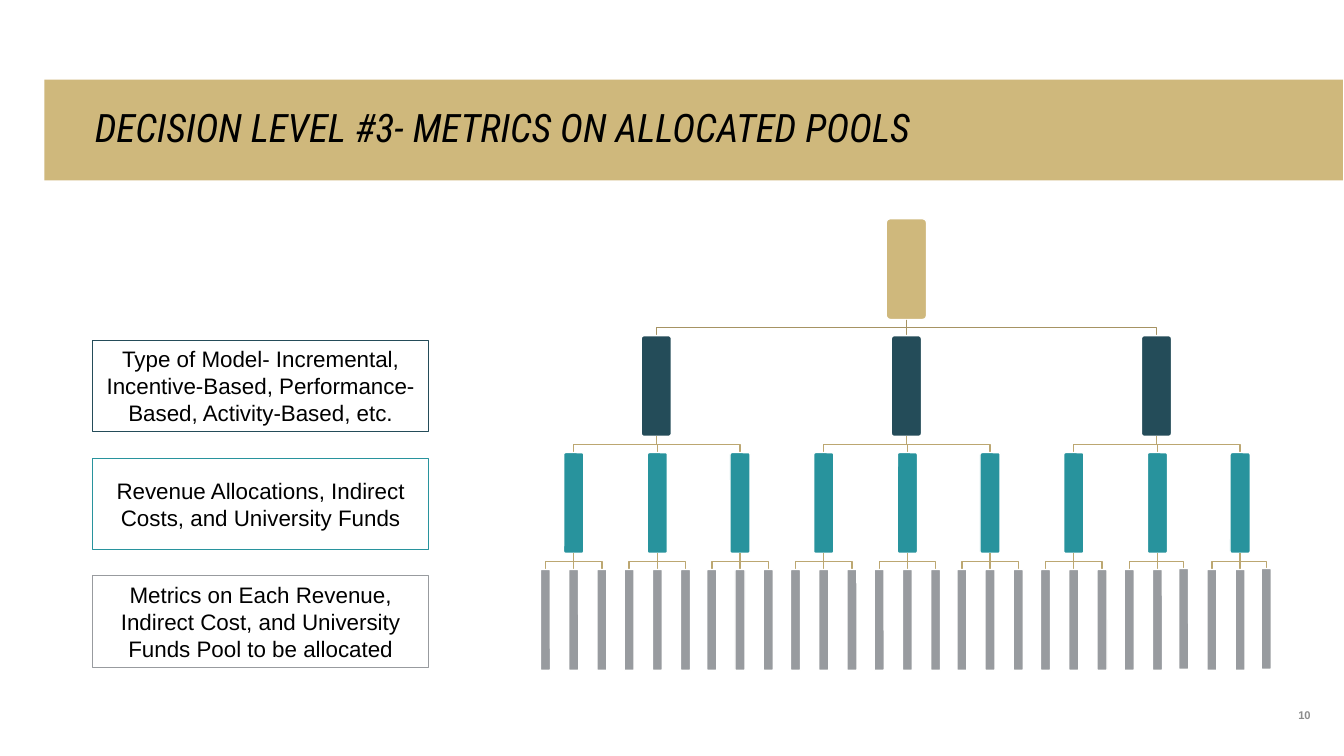
from lxml import etree
from pptx import Presentation
from pptx.dml.color import RGBColor
from pptx.enum.shapes import MSO_CONNECTOR as CONNECTOR, MSO_SHAPE as SHAPE
from pptx.enum.text import MSO_ANCHOR as ANCHOR, PP_ALIGN as ALIGN
from pptx.oxml.ns import qn
from pptx.util import Emu, Pt

PX = 9144  # EMU per px, 100 px to the inch
GOLD, NAVY, TEAL, GRAY = "CFB87C", "244C59", "28939D", "989B9F"
WHITE, BLACK, PAGE_GRAY = "FFFFFF", "000000", "8C8C8C"
TRUNK, BRANCH = "A69363", "BCA771"


def px(length):
    return Emu(length * PX)


def color(value):
    return RGBColor.from_string(value)


class SlideBuilder:
    """Holds the slide and draws its elements in one style."""

    def __init__(self, slide, font="Arial"):
        self.shapes = slide.shapes
        self.font = font

    def box(self, left, top, width, height, fill=None, line=None, weight=1,
            kind=SHAPE.RECTANGLE):
        box = self.shapes.add_shape(kind, px(left), px(top), px(width), px(height))
        box.shadow.inherit = False
        if fill:
            box.fill.solid()
            box.fill.fore_color.rgb = color(fill)
        else:
            box.fill.background()
        self.stroke(box, line, weight)
        return box

    def stroke(self, shape, line, weight=1):
        if line:
            shape.line.color.rgb = color(line)
            shape.line.width = Pt(weight)
        else:
            shape.line.fill.background()

    def set_text(self, shape, text, size, ink=BLACK, align=ALIGN.LEFT,
                 anchor=ANCHOR.MIDDLE, insets=(10, 5, 10, 5), font=None,
                 bold=False, italic=False, spacing=1.0):
        frame = shape.text_frame
        frame.word_wrap = True
        frame.vertical_anchor = anchor
        (frame.margin_left, frame.margin_top,
         frame.margin_right, frame.margin_bottom) = map(px, insets)
        paragraph = frame.paragraphs[0]
        paragraph.text = text
        paragraph.alignment = align
        paragraph.line_spacing = spacing
        style = paragraph.font
        style.name, style.size = font or self.font, Pt(size)
        style.bold, style.italic = bold, italic
        style.color.rgb = color(ink)

    def label(self, left, top, width, height, text, size, **style):
        label = self.shapes.add_textbox(px(left), px(top), px(width), px(height))
        self.set_text(label, text, size, **style)

    def node(self, center, top, width, height, fill):
        node = self.box(center - width // 2, top, width, height, fill, WHITE,
                        kind=SHAPE.ROUNDED_RECTANGLE)
        node.adjustments[0] = 0.1
        return node

    def drop(self, x, start, end, line):
        drop = self.shapes.add_connector(
            CONNECTOR.STRAIGHT, px(x), px(start), px(x), px(end))
        self.stroke(drop, line)
        etree.SubElement(drop._element.spPr, qn("a:effectLst"))
        return drop

    def elbow(self, x, start, to_x, end, line):
        bend = start + 8
        outline = self.shapes.build_freeform(x, start, scale=PX)
        outline.add_line_segments([(x, bend), (to_x, bend), (to_x, end)], close=False)
        elbow = outline.convert_to_shape()
        elbow.shadow.inherit = False
        elbow.fill.background()
        self.stroke(elbow, line)


# Tree levels: top, width, fill, line from the parent, offsets from the parent
NODE_HEIGHT = 100
LEVELS = [
    (217, 40, GOLD, None, ()),
    (333, 30, NAVY, TRUNK, (-248, 0, 248)),
    (449, 20, TEAL, BRANCH, (-82, 1, 83)),
    (565, 10, GRAY, BRANCH, (-28, 0, 28)),
]
RAISED_METRICS = (1176, 1258)  # two metrics sit slightly up and to the left


def grow_tree(builder, parent, parent_x, depth=1):
    if depth == len(LEVELS):
        return
    start = LEVELS[depth - 1][0] + NODE_HEIGHT
    level_top, width, fill, line, offsets = LEVELS[depth]
    for offset in offsets:
        x, top = parent_x + offset, level_top
        if depth == 3 and x in RAISED_METRICS:
            x, top = x - 2, top - 1
        if offset:
            builder.elbow(parent_x, start, x, top, line)
            child = builder.node(x, top, width, NODE_HEIGHT, fill)
        else:
            drop = builder.drop(x, start, top, line)
            child = builder.node(x, top, width, NODE_HEIGHT, fill)
            drop.begin_connect(parent, 2)
            drop.end_connect(child, 0)
        grow_tree(builder, child, x, depth + 1)


LEGEND = [
    (338, 90, NAVY, ANCHOR.TOP, "Type of Model- Incremental, Incentive-Based, "
     "Performance-Based, Activity-Based, etc."),
    (455, 90, TEAL, ANCHOR.MIDDLE,
     "Revenue Allocations, Indirect Costs, and University Funds"),
    (571, 91, GRAY, ANCHOR.MIDDLE, "Metrics on Each Revenue, Indirect Cost, "
     "and University Funds Pool to be allocated"),
]


def main():
    deck = Presentation()
    deck.slide_width, deck.slide_height = px(1333), px(750)
    builder = SlideBuilder(deck.slides.add_slide(deck.slide_layouts[6]))

    # Decision tree
    root_x = 899
    root_top, root_width, root_fill = LEVELS[0][:3]
    root = builder.node(root_x, root_top, root_width, NODE_HEIGHT, root_fill)
    grow_tree(builder, root, root_x)

    # Title banner
    banner = builder.box(44, 79, 1288, 100, GOLD)
    builder.set_text(banner, "DECISION LEVEL #3- METRICS ON ALLOCATED POOLS", 28,
                     insets=(50, 5, 100, 5), font="Roboto Condensed",
                     italic=True, spacing=0.9)

    # Page number
    builder.label(1215, 666, 85, 50, "10", 8, ink=PAGE_GRAY, align=ALIGN.RIGHT,
                  anchor=ANCHOR.BOTTOM, insets=(0, 0, 0, 0), bold=True)

    # Level descriptions
    for top, height, outline, anchor, text in LEGEND:
        description = builder.box(92, top, 333, height, line=outline, weight=0.75)
        builder.set_text(description, text, 16, align=ALIGN.CENTER, anchor=anchor)

    deck.save("out.pptx")


if __name__ == "__main__":
    main()
